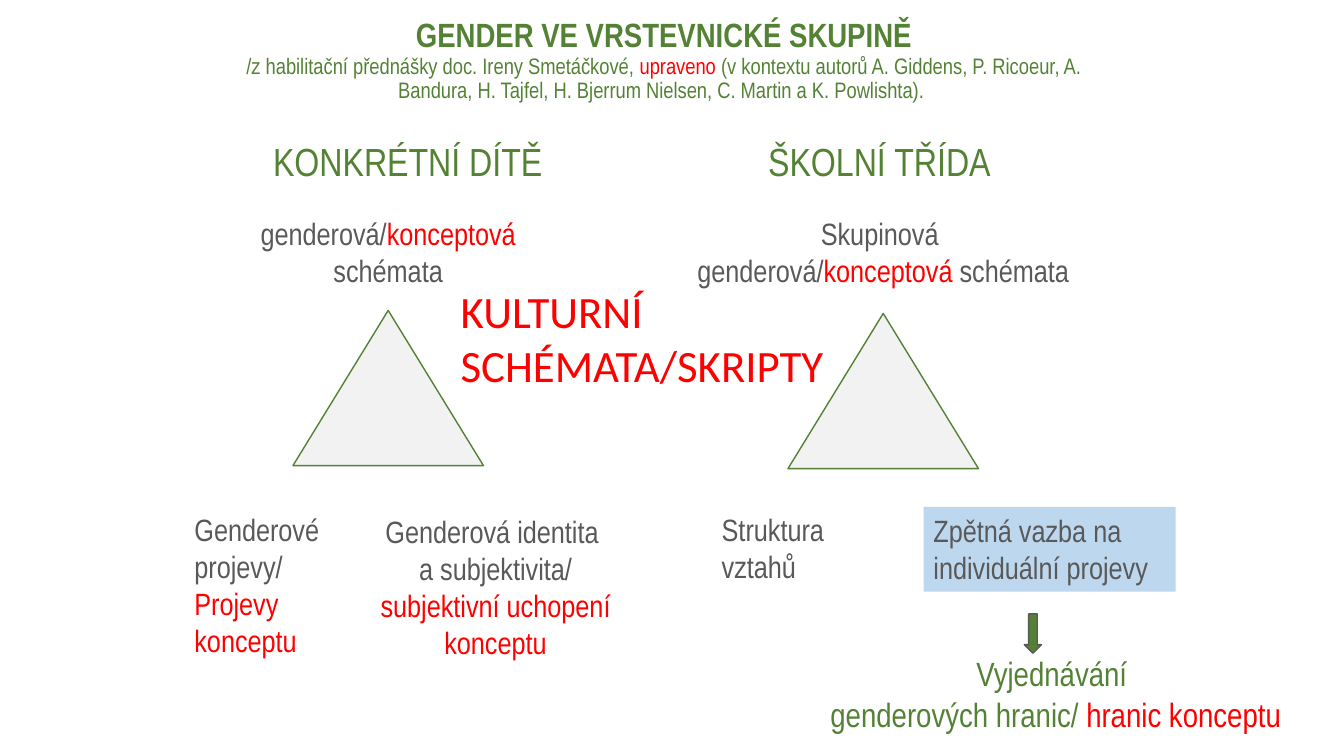
import pptx
import pptx.util
import pptx.dml.color
import pptx.enum.shapes
import pptx.enum.text

SCALE = 9144
GREEN = pptx.dml.color.RGBColor(0x54, 0x82, 0x35)
RED = pptx.dml.color.RGBColor(0xFF, 0x00, 0x00)
GRAY = pptx.dml.color.RGBColor(0x59, 0x59, 0x59)
PALE_GRAY = pptx.dml.color.RGBColor(0xF2, 0xF2, 0xF2)
PALE_BLUE = pptx.dml.color.RGBColor(0xBD, 0xD7, 0xEE)
NARROW = "Arial Narrow"
LEFT = pptx.enum.text.PP_ALIGN.LEFT
CENTER = pptx.enum.text.PP_ALIGN.CENTER
TOP = pptx.enum.text.MSO_ANCHOR.TOP
MIDDLE = pptx.enum.text.MSO_ANCHOR.MIDDLE
SHAPES = pptx.enum.shapes.MSO_SHAPE


def px(length):
    return pptx.util.Emu(round(length * SCALE))


def add_run(paragraph, text, size, color, font=NARROW, bold=False):
    run = paragraph.add_run()
    run.text = text
    run.font.size = pptx.util.Pt(size)
    run.font.name = font
    run.font.bold = bold
    run.font.color.rgb = color


def write_lines(shape, lines, size, align=LEFT, wrap=True, font=NARROW):
    frame = shape.text_frame
    frame.word_wrap = wrap
    frame.vertical_anchor = TOP
    paragraph = frame.paragraphs[0]
    paragraph.alignment = align
    for index, line in enumerate(lines):
        if index:
            paragraph.add_line_break()
        for text, color in line:
            add_run(paragraph, text, size, color, font)


def add_text(slide, box, lines, size, **options):
    shape = slide.shapes.add_textbox(*map(px, box))
    write_lines(shape, lines, size, **options)


def add_filled(slide, preset, box, fill, line=None):
    shape = slide.shapes.add_shape(preset, *map(px, box))
    shape.shadow.inherit = False
    shape.fill.solid()
    shape.fill.fore_color.rgb = fill
    if line is None:
        shape.line.fill.background()
    else:
        shape.line.color.rgb = line
        shape.line.width = pptx.util.Pt(1)
    return shape


def draw_title(slide, box):
    frame = slide.shapes.add_textbox(*map(px, box)).text_frame
    frame.word_wrap = True
    frame.vertical_anchor = MIDDLE
    paragraph = frame.paragraphs[0]
    paragraph.alignment = CENTER
    paragraph.line_spacing = 0.9
    add_run(paragraph, "GENDER VE VRSTEVNICKÉ SKUPINĚ", 24, GREEN, bold=True)
    paragraph.add_line_break()
    add_run(paragraph, "/z habilitační přednášky doc. Ireny Smetáčkové, ", 16, GREEN)
    add_run(paragraph, "upraveno", 16, RED)
    add_run(paragraph, " (v kontextu autorů A. Giddens, P. Ricoeur, A. Bandura, "
            "H. Tajfel, H. Bjerrum Nielsen, C. Martin a K. Powlishta). ", 16, GREEN)


def draw_triangle_column(slide, box, heading, schemata, triangle_drop):
    left, top, width = box
    add_text(slide, (left + 76, top, 300, 57), [[(heading, GREEN)]], 28, wrap=False)
    add_text(slide, (left, top + 77, width, 84), schemata, 22, align=CENTER, wrap=False)
    triangle_width = 189
    triangle_left = left + (width - triangle_width) / 2
    add_filled(slide, SHAPES.ISOSCELES_TRIANGLE,
               (triangle_left, top + triangle_drop, triangle_width, 154), PALE_GRAY, GREEN)


def draw_child(slide, box):
    left, top, width = box
    schemata = [[("genderová/", GRAY), ("konceptová", RED)], [("schémata", GRAY)]]
    draw_triangle_column(slide, box, "KONKRÉTNÍ DÍTĚ", schemata, 177)
    add_text(slide, (left - 2, top + 371, 176, 158),
             [[("Genderové ", GRAY)], [("projevy/ ", GRAY), ("Projevy konceptu", RED)]], 22)
    add_text(slide, (left + 160, top + 373, 293, 158),
             [[("Genderová identita ", GRAY)],
              [("a subjektivita/ ", GRAY), ("subjektivní uchopení konceptu", RED)]],
             22, align=CENTER)


def draw_class(slide, box):
    left, top, width = box
    schemata = [[("Skupinová ", GRAY)],
                [("genderová/", GRAY), ("konceptová", RED), (" schémata", GRAY)]]
    draw_triangle_column(slide, box, "ŠKOLNÍ TŘÍDA", schemata, 180)
    add_text(slide, (left + 30, top + 371, 130, 84),
             [[("Struktura ", GRAY)], [("vztahů", GRAY)]], 22, wrap=False)
    feedback = add_filled(slide, SHAPES.RECTANGLE, (left + 240, top + 372, 250, 84), PALE_BLUE)
    write_lines(feedback, [[("Zpětná vazba na individuální projevy", GRAY)]], 22)


def draw_negotiation(slide, box):
    left, top, width, height = box
    add_filled(slide, SHAPES.DOWN_ARROW, (left + 217, top, 17, 39), GREEN, GRAY)
    add_text(slide, (left, top + 34, width, height - 34),
             [[("Vyjednávání ", GREEN)],
              [("genderových hranic/ ", GREEN), ("hranic konceptu", RED)]],
             24, align=CENTER)


def draw_culture(slide, box):
    add_text(slide, box, [[("KULTURNÍ SCHÉMATA/SKRIPTY", RED)]], 32, font="Calibri")


def main():
    presentation = pptx.Presentation()
    presentation.slide_width = px(1333)
    presentation.slide_height = px(750)
    slide = presentation.slides.add_slide(presentation.slide_layouts[6])
    draw_title(slide, (202, 21, 913, 79))
    draw_child(slide, (185, 131, 400))
    draw_class(slide, (676, 131, 400))
    draw_negotiation(slide, (799, 609, 496, 125))
    draw_culture(slide, (447, 277, 409, 118))
    presentation.save("out.pptx")


if __name__ == "__main__":
    main()
